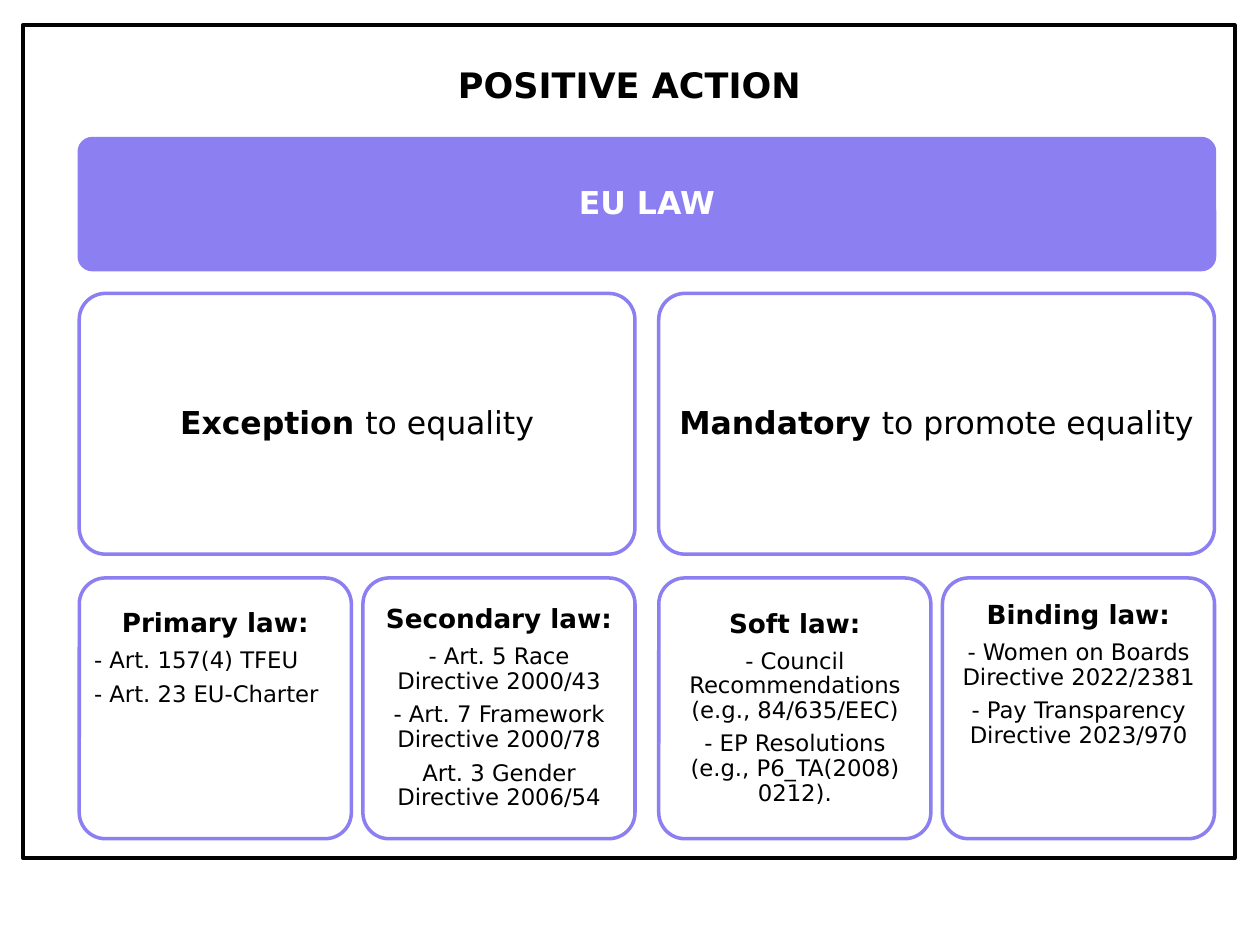
from dataclasses import dataclass

from pptx import Presentation
from pptx.dml.color import RGBColor
from pptx.enum.shapes import MSO_SHAPE as Shape
from pptx.enum.text import MSO_ANCHOR as Anchor, PP_ALIGN as Align
from pptx.slide import Slide
from pptx.text.text import TextFrame
from pptx.util import Pt

BLACK = RGBColor(0x00, 0x00, 0x00)
FRAME = RGBColor(0x01, 0x03, 0x03)
WHITE = RGBColor(0xFF, 0xFF, 0xFF)
VIOLET = RGBColor(0x8C, 0x7F, 0xF1)
FONT = "DejaVu Sans"

LEFT, TOP, WIDTH = 45.3, 79.2, 648.7
GAP, LAW_GAP = 13.6, 6.6
BAR_HEIGHT, CARD_HEIGHT = 74.9, 149
HALF_WIDTH = (WIDTH - GAP) / 2
LAW_WIDTH = (HALF_WIDTH - LAW_GAP) / 2
BRANCH_TOP = TOP + BAR_HEIGHT + GAP
LAW_TOP = BRANCH_TOP + CARD_HEIGHT + GAP
ITEM_PITCH = 18.9


@dataclass(frozen=True)
class Line:
    bold: str = ""
    plain: str = ""
    size: float = 18
    align: Align = Align.CENTER


@dataclass(frozen=True)
class Law:
    heading: str
    items: tuple[str, ...]
    item_align: Align = Align.CENTER
    free_lines: int = 0

    def lines(self) -> list[Line]:
        return [Line(bold=self.heading, size=15)] + [
            Line(plain=item, size=13, align=self.item_align) for item in self.items
        ]


@dataclass(frozen=True)
class Branch:
    claim: Line
    laws: tuple[Law, ...]


BRANCHES = (
    Branch(
        Line("Exception ", "to equality"),
        (
            Law(
                "Primary law:",
                ("- Art. 157(4) TFEU", "- Art. 23 EU-Charter"),
                Align.LEFT,
                free_lines=3,
            ),
            Law(
                "Secondary law:",
                (
                    "- Art. 5 Race Directive 2000/43",
                    "- Art. 7 Framework Directive 2000/78",
                    "Art. 3 Gender Directive 2006/54",
                ),
            ),
        ),
    ),
    Branch(
        Line("Mandatory ", "to promote equality"),
        (
            Law(
                "Soft law:",
                (
                    "- Council Recommendations (e.g., 84/635/EEC)",
                    "- EP Resolutions (e.g., P6_TA(2008) 0212).",
                ),
            ),
            Law(
                "Binding law:",
                (
                    "- Women on Boards Directive 2022/2381",
                    "- Pay Transparency Directive 2023/970",
                ),
                free_lines=2,
            ),
        ),
    ),
)


def write(frame: TextFrame, lines: list[Line], color: RGBColor) -> None:
    frame.word_wrap = True
    frame.vertical_anchor = Anchor.MIDDLE
    for index, line in enumerate(lines):
        paragraph = frame.paragraphs[0] if index == 0 else frame.add_paragraph()
        paragraph.alignment = line.align
        paragraph.line_spacing = 0.9
        if index < len(lines) - 1:
            paragraph.space_after = Pt(line.size * 0.4)
        for text, bold in ((line.bold, True), (line.plain, False)):
            if text:
                run = paragraph.add_run()
                run.text = text
                run.font.name = FONT
                run.font.size = Pt(line.size)
                run.font.bold = bold
                run.font.color.rgb = color


def add_card(
    slide: Slide,
    left: float,
    top: float,
    width: float,
    height: float,
    lines: list[Line],
    fill: RGBColor = WHITE,
    color: RGBColor = BLACK,
    inset: float = 5,
    free_lines: int = 0,
) -> None:
    card = slide.shapes.add_shape(
        Shape.ROUNDED_RECTANGLE, Pt(left), Pt(top), Pt(width), Pt(height)
    )
    card.adjustments[0] = 0.1
    card.shadow.inherit = False
    card.fill.solid()
    card.fill.fore_color.rgb = fill
    card.line.color.rgb = VIOLET
    card.line.width = Pt(2)
    frame = card.text_frame
    frame.margin_left = frame.margin_right = frame.margin_top = Pt(inset)
    frame.margin_bottom = Pt(inset + free_lines * ITEM_PITCH)
    write(frame, lines, color)


def add_branch(slide: Slide, branch: Branch, left: float) -> None:
    add_card(slide, left, BRANCH_TOP, HALF_WIDTH, CARD_HEIGHT, [branch.claim])
    for index, law in enumerate(branch.laws):
        add_card(
            slide,
            left + index * (LAW_WIDTH + LAW_GAP),
            LAW_TOP,
            LAW_WIDTH,
            CARD_HEIGHT,
            law.lines(),
            inset=4.1,
            free_lines=law.free_lines,
        )


def main() -> None:
    deck = Presentation()
    deck.slide_width, deck.slide_height = Pt(720), Pt(540)
    slide = deck.slides.add_slide(deck.slide_layouts[6])

    border = slide.shapes.add_shape(
        Shape.RECTANGLE, Pt(13), Pt(14.4), Pt(692.6), Pt(475.9)
    )
    border.shadow.inherit = False
    border.fill.background()
    border.line.color.rgb = FRAME
    border.line.width = Pt(2.25)

    title = slide.shapes.add_textbox(Pt(31), Pt(28.1), Pt(657.4), Pt(43.2))
    write(title.text_frame, [Line("POSITIVE ACTION", size=20)], BLACK)

    add_card(
        slide, LEFT, TOP, WIDTH, BAR_HEIGHT, [Line("EU LAW")], fill=VIOLET, color=WHITE
    )
    for index, branch in enumerate(BRANCHES):
        add_branch(slide, branch, LEFT + index * (HALF_WIDTH + GAP))

    deck.save("out.pptx")


if __name__ == "__main__":
    main()
